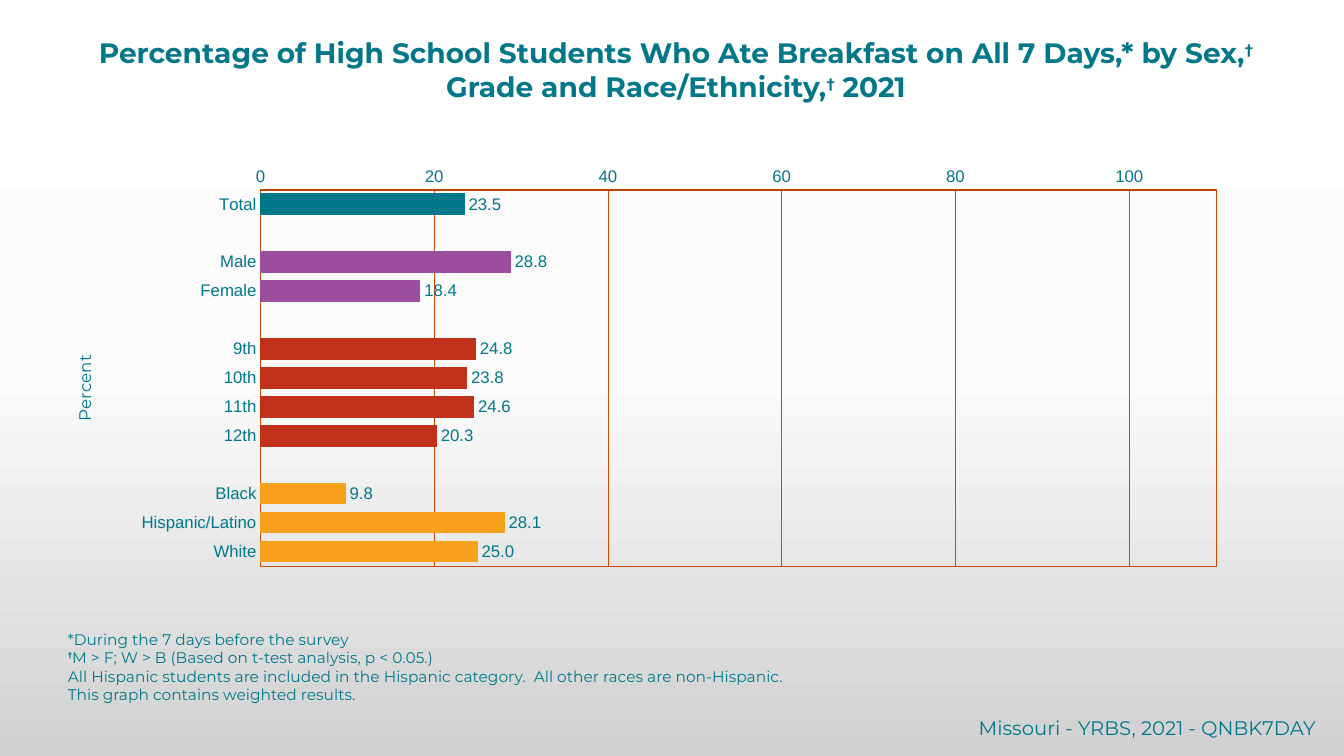
import pptx
import pptx.chart.data
import pptx.dml.color
import pptx.enum.chart
import pptx.enum.text
import pptx.oxml
import pptx.oxml.ns
import pptx.util
from lxml import etree

PX = 914400 / 100.8
COLORS = {
    "teal": "007889", "footer": "00788A", "purple": "9B4E9E", "red": "BF311B",
    "amber": "F7A01B", "grid": "CC4A05", "axis": "AA3D04",
}
BACKGROUND_STOPS = [(0, "FFFFFF"), (50, "FBFBFB"), (100, "D1D1D1")]
GROUPS = [
    ("teal", [("Total", 23.5)]),
    ("purple", [("Male", 28.8), ("Female", 18.4)]),
    ("red", [("9th", 24.8), ("10th", 23.8), ("11th", 24.6), ("12th", 20.3)]),
    ("amber", [("Black", 9.8), ("Hispanic/Latino", 28.1), ("White", 25.0)]),
]
qn = pptx.oxml.ns.qn


def px(length):
    return pptx.util.Emu(round(length * PX))


def rgb(name):
    return pptx.dml.color.RGBColor.from_string(COLORS[name])


def format_font(font, size, name="Montserrat", color="teal", bold=False):
    font.size = pptx.util.Pt(size)
    font.name = name
    font.bold = bold
    font.color.rgb = rgb(color)


def format_line(line, color, width):
    line.color.rgb = rgb(color)
    line.width = pptx.util.Pt(width)


def add_text(paragraph, text, raised=0, **font_format):
    run = paragraph.add_run()
    run.text = text
    format_font(run.font, **font_format)
    if raised:
        run.font._element.set("baseline", str(raised * 1000))


def add_text_box(slide, box, paragraphs, align="LEFT", anchor="TOP"):
    """Each paragraph is a list of (text, format) runs."""
    frame = slide.shapes.add_textbox(*map(px, box)).text_frame
    frame.word_wrap = True
    frame.auto_size = pptx.enum.text.MSO_AUTO_SIZE.SHAPE_TO_FIT_TEXT
    frame.vertical_anchor = pptx.enum.text.MSO_ANCHOR[anchor]
    for index, runs in enumerate(paragraphs):
        paragraph = frame.add_paragraph() if index else frame.paragraphs[0]
        paragraph.alignment = pptx.enum.text.PP_ALIGN[align]
        for text, font_format in runs:
            add_text(paragraph, text, **font_format)


def set_layout(parent, index, **settings):
    for old in parent.findall(qn("c:layout")):
        parent.remove(old)
    layout = etree.Element(qn("c:layout"))
    manual = etree.SubElement(layout, qn("c:manualLayout"))
    for tag, value in settings.items():
        etree.SubElement(manual, qn("c:" + tag)).set("val", str(value))
    parent.insert(index, layout)


def paint_background(slide):
    fill = slide.background.fill
    fill.gradient()
    fill.gradient_angle = 270
    stops = next(slide.element.iter(qn("a:gsLst")))
    for stop in list(stops):
        stops.remove(stop)
    for position, color in BACKGROUND_STOPS:
        stop = etree.SubElement(stops, qn("a:gs"), pos=str(position * 1000))
        etree.SubElement(stop, qn("a:srgbClr"), val=color)


def add_title(slide, box):
    heading = dict(size=20, bold=True)
    dagger = ("†", dict(size=17, bold=True, raised=40))
    add_text_box(slide, box, [[
        ("Percentage of High School Students Who Ate Breakfast on All 7 Days,* by Sex,", heading),
        dagger, (" Grade and Race/Ethnicity,", heading), dagger, (" 2021", heading),
    ]], align="CENTER")


def add_breakfast_chart(slide, box):
    # One row per bar, with an empty row between groups
    rows = []
    for color, bars in GROUPS:
        if rows:
            rows.append(("", None, None))
        rows += [(label, value, color) for label, value in bars]
    data = pptx.chart.data.CategoryChartData()
    data.categories = [label for label, _, _ in rows]
    data.add_series("Series 1", [value for _, value, _ in rows])
    chart = slide.shapes.add_chart(
        pptx.enum.chart.XL_CHART_TYPE.BAR_CLUSTERED, *map(px, box), data).chart
    chart.has_legend = False
    chart.has_title = False
    format_font(chart.font, 12, "Arial")

    # Bars and their values
    plot = chart.plots[0]
    plot.gap_width = 34
    plot.vary_by_categories = False
    series = plot.series[0]
    series.format.fill.solid()
    series.format.fill.fore_color.rgb = rgb("teal")
    for index, (_, _, color) in enumerate(rows):
        if color:
            fill = series.points[index].format.fill
            fill.solid()
            fill.fore_color.rgb = rgb(color)
    labels = series.data_labels
    labels.show_value = True
    labels.number_format = "#,##0.0"
    labels.number_format_is_linked = False
    labels.position = pptx.enum.chart.XL_LABEL_POSITION.OUTSIDE_END
    format_font(labels.font, 12, "Arial")

    # Axes
    categories, values = chart.category_axis, chart.value_axis
    for axis, color in ((categories, "grid"), (values, "axis")):
        axis.major_tick_mark = axis.minor_tick_mark = pptx.enum.chart.XL_TICK_MARK.NONE
        format_line(axis.format.line, color, 0.25)
        format_font(axis.tick_labels.font, 12, "Arial")
    categories.reverse_order = True
    categories.has_major_gridlines = False
    values.minimum_scale, values.maximum_scale, values.major_unit = 0, 110, 20
    values.has_major_gridlines = True
    format_line(values.major_gridlines.format.line, "grid", 0.5)

    # Upright axis title at the left
    title = values.axis_title
    add_text(title.text_frame.paragraphs[0], "Percent", size=12)
    title_element = next(chart.element.iter(qn("c:valAx"))).find(qn("c:title"))
    body = next(title_element.iter(qn("a:bodyPr")))
    body.set("rot", "-5400000")
    body.set("vert", "horz")
    set_layout(title_element, 1, xMode="edge", yMode="edge", x=0.01, y=0.39)

    # Plot area place and border
    area = next(chart.element.iter(qn("c:plotArea")))
    set_layout(area, 0, layoutTarget="inner", xMode="edge", yMode="edge",
               x=0.165, y=0.045, w=0.779, h=0.8)
    area.append(pptx.oxml.parse_xml(
        f'<c:spPr {pptx.oxml.ns.nsdecls("c", "a")}><a:noFill/><a:ln w="6350"><a:solidFill>'
        f'<a:srgbClr val="{COLORS["grid"]}"/></a:solidFill></a:ln></c:spPr>'))


def add_footnotes(slide, box):
    note = dict(size=11)
    add_text_box(slide, box, [
        [("*During the 7 days before the survey", note)],
        [("†", dict(size=9, bold=True, raised=50)),
         ("M > F; W > B (Based on t-test analysis, p < 0.05.)", note)],
        [("All Hispanic students are included in the Hispanic category.  "
          "All other races are non-Hispanic.", note)],
        [("This graph contains weighted results.", note)],
    ], anchor="BOTTOM")


def add_source_line(slide, box):
    add_text_box(slide, box, [[
        ("Missouri - YRBS, 2021 - QNBK7DAY", dict(size=14, color="footer"))]], align="RIGHT")


def main():
    presentation = pptx.Presentation()
    presentation.slide_width, presentation.slide_height = px(1344), px(756)
    slide = presentation.slides.add_slide(presentation.slide_layouts[6])
    paint_background(slide)
    add_breakfast_chart(slide, (58, 168, 1227, 471))
    add_footnotes(slide, (58, 680, 1227, 29))
    add_title(slide, (76, 31, 1200, 78))
    add_source_line(slide, (378, 711, 948, 34))
    presentation.save("out.pptx")


if __name__ == "__main__":
    main()
